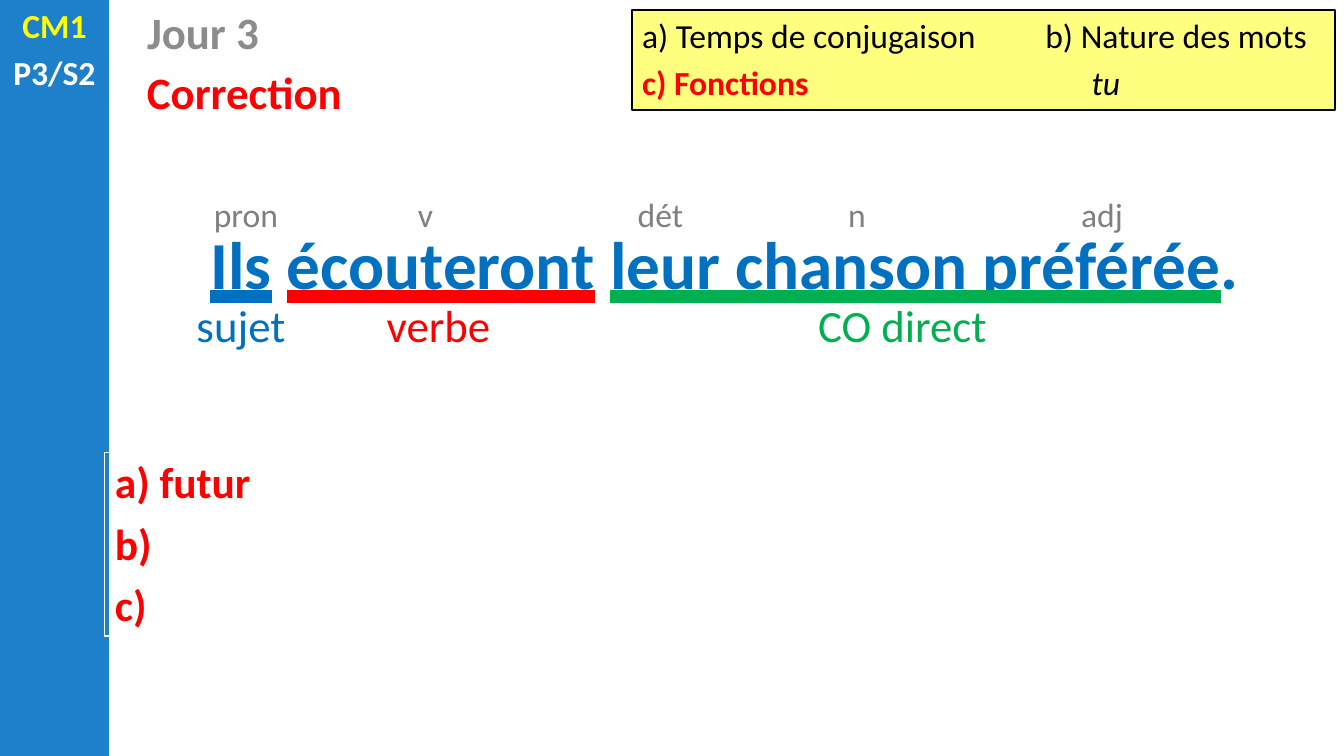
from lxml import etree
from pptx import Presentation
from pptx.dml.color import RGBColor
from pptx.enum.shapes import MSO_SHAPE as Shape
from pptx.enum.text import MSO_ANCHOR as Anchor, MSO_UNDERLINE as Underline, PP_ALIGN as Align
from pptx.oxml.ns import qn
from pptx.util import Inches, Pt

BLUE, RED, GREEN, GREY = "0070C0", "FF0000", "00B050", "808080"
YELLOW, BLACK, WHITE = "FFFF00", "000000", "FFFFFF"


def color(value):
    return RGBColor.from_string(value)


def write(paragraph, text, size=24, fill=BLACK, bold=False, italic=False, underline=None):
    """Add a run; underline gives the colour of a heavy underline."""
    run = paragraph.add_run()
    run.text = text
    font = run.font
    font.name, font.size, font.bold, font.italic = "Calibri", Pt(size), bold, italic
    font.color.rgb = color(fill)
    if underline:
        font.underline = Underline.HEAVY_LINE
        line_fill = etree.Element(qn("a:uFill"))
        solid = etree.SubElement(line_fill, qn("a:solidFill"))
        etree.SubElement(solid, qn("a:srgbClr"), val=underline)
        run._r.rPr.find(qn("a:latin")).addprevious(line_fill)


def next_paragraph(frame, space=4.8):
    paragraph = frame.add_paragraph()
    paragraph.space_before = Pt(space)
    return paragraph


def text_frame(slide, left, top, width, height, align=Align.LEFT):
    frame = slide.shapes.add_textbox(*map(Inches, (left, top, width, height))).text_frame
    frame.word_wrap = True
    frame.paragraphs[0].alignment = align
    return frame


def label(slide, text, left, top, width, height, align=Align.CENTER, **style):
    frame = text_frame(slide, left, top, width, height, align)
    write(frame.paragraphs[0], text, **style)


def panel(slide, left, top, width, height, fill, opacity=100, border=None):
    shape = slide.shapes.add_shape(Shape.RECTANGLE, *map(Inches, (left, top, width, height)))
    shape.shadow.inherit = False
    shape.fill.solid()
    shape.fill.fore_color.rgb = color(fill)
    if opacity < 100:
        tint = shape._element.spPr.find(qn("a:solidFill")).find(qn("a:srgbClr"))
        etree.SubElement(tint, qn("a:alpha"), val=str(opacity * 1000))
    if border:
        shape.line.color.rgb = color(border)
        shape.line.width = Pt(1.5)
    else:
        shape.line.fill.background()
    return shape


def tab_stop(paragraph, position):
    stops = etree.SubElement(paragraph._p.get_or_add_pPr(), qn("a:tabLst"))
    etree.SubElement(stops, qn("a:tab"), pos=str(Inches(position)), algn="l")


def sidebar(slide):
    panel(slide, 0, 0, 1.08, 7.5, "1E7FCB")
    level = text_frame(slide, 0, 0, 1.08, 0.99, Align.CENTER)
    write(level.paragraphs[0], "CM1", fill=YELLOW, bold=True)
    period = next_paragraph(level)
    period.alignment = Align.CENTER
    write(period, "P3/S2", fill=WHITE, bold=True)


def instructions(slide):
    frame = panel(slide, 6.27, 0.1, 6.97, 0.99, YELLOW, 50, BLACK).text_frame
    frame.word_wrap = True
    frame.vertical_anchor = Anchor.TOP
    tasks, functions = frame.paragraphs[0], next_paragraph(frame)
    for paragraph, position in ((tasks, 4), (functions, 4.46)):
        paragraph.alignment = Align.LEFT
        tab_stop(paragraph, position)
    write(tasks, "a) Temps de conjugaison\tb) Nature des mots")
    write(functions, "c) Fonctions\t", fill=RED, bold=True)
    write(functions, "tu", italic=True)


def sentence(slide):
    words = text_frame(slide, 1.04, 2.16, 12.29, 0.91, Align.CENTER).paragraphs[0]
    for text, underline in (("Ils", BLUE), (" ", None), ("écouteront", RED), (" ", None),
                            ("leur chanson préférée", GREEN), (".", None)):
        write(words, text, size=48, fill=BLUE, bold=True, underline=underline)

    # Word classes above, functions below
    for nature, left in (("pron", 1.99), ("v", 3.77), ("dét", 6.1), ("n", 8.05), ("adj", 10.48)):
        label(slide, nature, left, 1.87, 0.9, 0.5, fill=GREY)
    for function, left, width, fill in (("sujet", 1.77, 1.24, BLUE), ("verbe", 3.73, 1.24, RED),
                                        ("CO direct", 8, 1.9, GREEN)):
        label(slide, function, left, 2.9, width, 0.64, size=32, fill=fill)


def answers(slide):
    table = slide.shapes.add_table(1, 1, *map(Inches, (1.04, 4.49, 12.29, 1.82))).table
    table.first_row = table.horz_banding = False
    cell = table.cell(0, 0)
    cell.fill.background()
    frame = cell.text_frame
    for index, answer in enumerate(("a) futur", "b)", "c)")):
        paragraph = frame.add_paragraph() if index else frame.paragraphs[0]
        paragraph.space_after = Pt(6)
        write(paragraph, answer, size=31, fill=RED, bold=True)


def main():
    deck = Presentation()
    deck.slide_width, deck.slide_height = Inches(13.33), Inches(7.5)
    slide = deck.slides.add_slide(deck.slide_layouts[6])
    sidebar(slide)
    # Headings
    label(slide, "Jour 3", 1.36, 0, 7.91, 0.64, Align.LEFT, size=32, fill="8C8C8C", bold=True)
    label(slide, "Correction", 1.36, 0.59, 4.83, 0.64, Align.LEFT, size=32, fill=RED, bold=True)
    instructions(slide)
    sentence(slide)
    answers(slide)
    deck.save("out.pptx")


if __name__ == "__main__":
    main()
